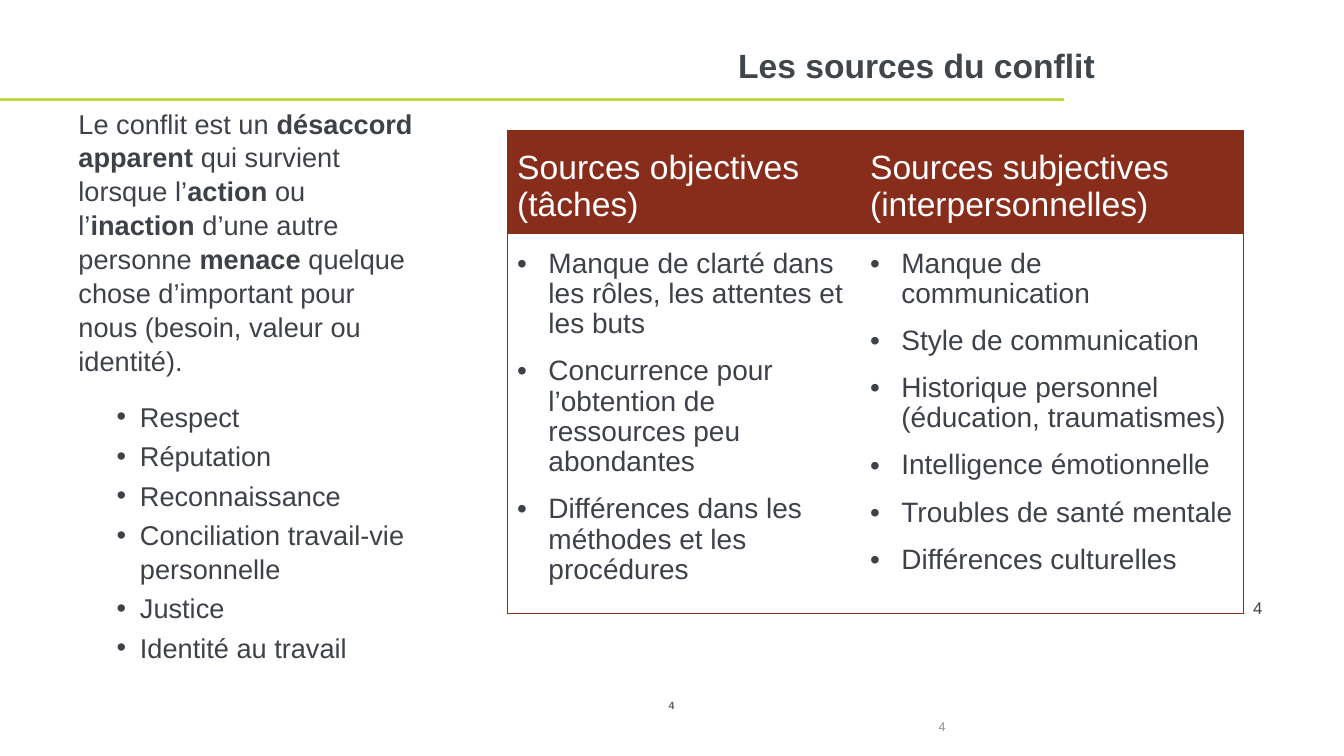
from lxml.etree import SubElement, Element
from pptx import Presentation
from pptx.dml.color import RGBColor
from pptx.enum.shapes import MSO_CONNECTOR
from pptx.enum.text import MSO_ANCHOR, PP_ALIGN
from pptx.oxml.ns import qn
from pptx.util import Inches, Pt

COLORS = {"title": "40464A", "text": "3E4248", "rule": "C3D941", "table": "882D1C",
          "white": "FFFFFF", "footer": "606060", "pale": "929395"}
FONT = "Arial"
TITLE = "Les sources du conflit "
DEFINITION = ("Le conflit est un **désaccord apparent **qui survient lorsque l’**action **ou "
              "l’**inaction **d’une autre personne **menace** quelque chose d’important "
              "pour nous (besoin, valeur ou identité).")
STAKES = ["Respect", "Réputation", "Reconnaissance", "Conciliation travail‑vie personnelle",
          "Justice", "Identité au travail"]
SOURCES = {
    "Sources objectives (tâches)": [
        "Manque de clarté dans les rôles, les attentes et les buts",
        "Concurrence pour l’obtention de ressources peu abondantes",
        "Différences dans les méthodes et les procédures"],
    "Sources subjectives (interpersonnelles)": [
        "Manque de communication", "Style de communication",
        "Historique personnel (éducation, traumatismes)", "Intelligence émotionnelle",
        "Troubles de santé mentale", "Différences culturelles"],
}
PAGE = "4"
PAGE_MARKS = [
    ((6.4, 6.88, 0.52, 0.24), 7.5, "footer", True, PP_ALIGN.CENTER, MSO_ANCHOR.MIDDLE, None),
    ((12.33, 5.88, 0.87, 0.3), 12, "text", False, PP_ALIGN.LEFT, MSO_ANCHOR.TOP, None),
    ((8.98, 7.13, 0.4, 0.22), 9, "pale", False, PP_ALIGN.RIGHT, MSO_ANCHOR.TOP, 0),
]
COLUMN_WIDTHS = [3.5, 3.8]
ROW_HEIGHTS = [1.03, 3.63]
TABLE_LEFT, TABLE_TOP = 5.03, 1.29
RULE_RIGHT, RULE_Y = 10.55, 0.99


def rgb(name):
    return RGBColor.from_string(COLORS[name])


def write(paragraph, text, size, color, bold=False, align=PP_ALIGN.LEFT,
          spacing=None, before=0, after=0):
    for index, part in enumerate(text.split("**")):
        run = paragraph.add_run()
        run.text = part
        run.font.name = FONT
        run.font.size = Pt(size)
        run.font.bold = bold or index % 2 == 1
        run.font.color.rgb = rgb(color)
    paragraph.alignment = align
    paragraph.space_before = Pt(before)
    paragraph.space_after = Pt(after)
    if spacing:
        paragraph.line_spacing = spacing


def add_bullet(paragraph, margin, hanging):
    properties = paragraph._p.get_or_add_pPr()
    properties.set("marL", str(Inches(margin)))
    properties.set("indent", str(-Inches(hanging)))
    SubElement(properties, qn("a:buFont"), typeface=FONT)
    SubElement(properties, qn("a:buChar"), char="•")


def add_text_frame(slide, area, anchor=MSO_ANCHOR.TOP, inset=None):
    frame = slide.shapes.add_textbox(*map(Inches, area)).text_frame
    frame.word_wrap = True
    frame.vertical_anchor = anchor
    if inset is not None:
        frame.margin_left = frame.margin_right = Inches(inset)
        frame.margin_top = frame.margin_bottom = Inches(inset)
    return frame


def set_borders(cell, visible):
    properties = cell._tc.get_or_add_tcPr()
    for index, side in enumerate("LRTB"):
        border = Element(qn(f"a:ln{side}"), w=str(Pt(0.75)))
        if side in visible:
            fill = SubElement(border, qn("a:solidFill"))
            SubElement(fill, qn("a:srgbClr"), val=COLORS["table"])
        else:
            SubElement(border, qn("a:noFill"))
        properties.insert(index, border)


def style_cell(cell, fill, borders, anchor):
    cell.fill.solid()
    cell.fill.fore_color.rgb = rgb(fill)
    cell.vertical_anchor = anchor
    cell.margin_left = cell.margin_right = Inches(0.1)
    cell.margin_top, cell.margin_bottom = Inches(0.15), Inches(0.05)
    set_borders(cell, borders)


def add_sources(slide):
    table = slide.shapes.add_table(
        len(ROW_HEIGHTS), len(COLUMN_WIDTHS), Inches(TABLE_LEFT), Inches(TABLE_TOP),
        Inches(sum(COLUMN_WIDTHS)), Inches(sum(ROW_HEIGHTS))).table
    for row, height in zip(table.rows, ROW_HEIGHTS):
        row.height = Inches(height)
    for index, (heading, causes) in enumerate(SOURCES.items()):
        table.columns[index].width = Inches(COLUMN_WIDTHS[index])
        outer_side = "LR"[index]
        header, body = table.cell(0, index), table.cell(1, index)
        style_cell(header, "table", outer_side + "T", MSO_ANCHOR.MIDDLE)
        style_cell(body, "white", outer_side + "TB", MSO_ANCHOR.TOP)
        write(header.text_frame.paragraphs[0], heading, 24, "white", spacing=0.97)
        for position, cause in enumerate(causes):
            frame = body.text_frame
            paragraph = frame.add_paragraph() if position else frame.paragraphs[0]
            add_bullet(paragraph, 0.31, 0.31)
            write(paragraph, cause, 20, "text", spacing=0.97, after=12)


def main():
    deck = Presentation()
    deck.slide_width, deck.slide_height = Inches(13.33), Inches(7.5)
    slide = deck.slides.add_slide(deck.slide_layouts[6])

    rule = slide.shapes.add_connector(MSO_CONNECTOR.STRAIGHT, Inches(RULE_RIGHT),
                                      Inches(RULE_Y), 0, Inches(RULE_Y))
    rule.line.color.rgb = rgb("rule")
    rule.line.width = Pt(2)
    SubElement(rule._element.spPr, qn("a:effectLst"))

    title = add_text_frame(slide, (2.27, 0.4, 8.78, 0.6))
    write(title.paragraphs[0], TITLE, 24, "title", bold=True, align=PP_ALIGN.RIGHT)

    definition = add_text_frame(slide, (0.68, 1, 3.6, 5.23))
    write(definition.paragraphs[0], DEFINITION, 19.4, "text", spacing=1.04, after=12)
    for stake in STAKES:
        paragraph = definition.add_paragraph()
        add_bullet(paragraph, 0.61, 0.23)
        write(paragraph, stake, 19.4, "text", spacing=1.04, before=4)

    add_sources(slide)

    for area, size, color, bold, align, anchor, inset in PAGE_MARKS:
        mark = add_text_frame(slide, area, anchor, inset)
        write(mark.paragraphs[0], PAGE, size, color, bold, align)

    deck.save("out.pptx")


if __name__ == "__main__":
    main()
